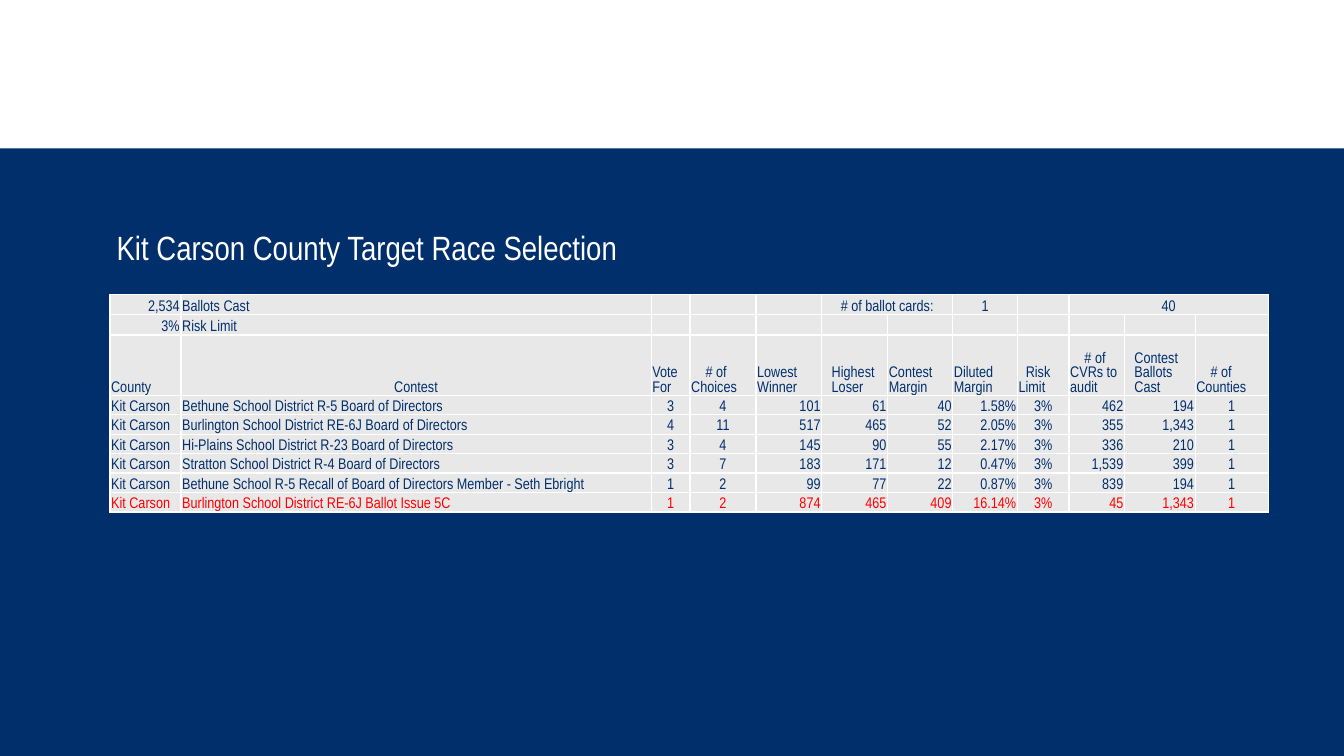
from lxml import etree
from pptx import Presentation
from pptx import util as u
from pptx.dml import color
from pptx.enum import shapes, text
from pptx.oxml import ns

NAVY, WHITE, GREY, RED = "002F6C", "FFFFFF", "E9E8E9", "FF0000"
ALIGN = {"l": text.PP_ALIGN.LEFT, "c": text.PP_ALIGN.CENTER, "r": text.PP_ALIGN.RIGHT}

COLUMN_WIDTHS = [1.79, 11.85, 0.98, 1.66, 1.66, 1.66, 1.64, 1.63, 1.3, 1.4, 1.78, 1.84]
ROW_HEIGHT, HEADER_HEIGHT = 0.49, 1.52
COLUMN_ALIGN = "llccrrrrcrrc"
HEADERS = ["County", "Contest", "Vote For", "# of Choices", "Lowest Winner",
           "Highest Loser", "Contest Margin", "Diluted Margin", "Risk Limit",
           "# of CVRs to audit", "Contest Ballots Cast", "# of Counties"]
HEADER_INDENTS = {3: 0.36, 8: 0.18, 9: 0.36, 11: 0.36}
HEADER_MARGINS = {5: 0.25, 10: 0.25}
# Row, column, text, alignment, columns spanned
SUMMARY = [(0, 0, "2,534", "r", 1), (0, 1, "Ballots Cast", "l", 1),
           (0, 5, "# of ballot cards:", "c", 2), (0, 7, "1", "c", 1),
           (0, 9, "40", "c", 3),
           (1, 0, "3%", "r", 1), (1, 1, "Risk Limit", "l", 1)]
CONTESTS = [
    ("Bethune School District R-5 Board of Directors",
     "3", "4", "101", "61", "40", "1.58%", "3%", "462", "194", "1"),
    ("Burlington School District RE-6J Board of Directors",
     "4", "11", "517", "465", "52", "2.05%", "3%", "355", "1,343", "1"),
    ("Hi-Plains School District R-23 Board of Directors",
     "3", "4", "145", "90", "55", "2.17%", "3%", "336", "210", "1"),
    ("Stratton School District R-4 Board of Directors",
     "3", "7", "183", "171", "12", "0.47%", "3%", "1,539", "399", "1"),
    ("Bethune School R-5 Recall of Board of Directors Member - Seth Ebright",
     "1", "2", "99", "77", "22", "0.87%", "3%", "839", "194", "1"),
    ("Burlington School District RE-6J Ballot Issue 5C",
     "1", "2", "874", "465", "409", "16.14%", "3%", "45", "1,343", "1"),
]


def rgb(value):
    return color.RGBColor.from_string(value)


def write(frame, words, size=11, ink=NAVY, align="l", indent=0, font="Arial Narrow"):
    """Fill the first paragraph of a text frame with one formatted run."""
    para = frame.paragraphs[0]
    para.alignment = ALIGN[align]
    if indent:
        para._p.get_or_add_pPr().set("indent", str(u.Cm(indent)))
    span = para.add_run()
    span.text = words
    span.font.size = u.Pt(size)
    span.font.name = font
    span.font.color.rgb = rgb(ink)


class SlideBuilder:
    def __init__(self, deck, background):
        self.slide = deck.slides.add_slide(deck.slide_layouts[6])
        fill = self.slide.background.fill
        fill.solid()
        fill.fore_color.rgb = rgb(background)

    def band(self, left, top, width, height, fill):
        box = self.slide.shapes.add_shape(
            shapes.MSO_SHAPE.RECTANGLE, *map(u.Cm, (left, top, width, height)))
        box.shadow.inherit = False
        box.fill.solid()
        box.fill.fore_color.rgb = rgb(fill)
        box.line.fill.background()

    def title(self, left, top, width, height, words):
        box = self.slide.shapes.add_textbox(*map(u.Cm, (left, top, width, height)))
        box.text_frame.word_wrap = True
        write(box.text_frame, words, size=24, ink=WHITE)

    def table(self, left, top, widths, heights):
        frame = self.slide.shapes.add_table(
            len(heights), len(widths),
            *map(u.Cm, (left, top, sum(widths), sum(heights))))
        grid = frame.table
        for column, width in zip(grid.columns, widths):
            column.width = u.Cm(width)
        for row, height in zip(grid.rows, heights):
            row.height = u.Cm(height)
        for cell in grid.iter_cells():
            self.style_cell(cell)
        return grid

    def style_cell(self, cell):
        cell.margin_left = cell.margin_right = cell.margin_top = u.Cm(0.03)
        cell.margin_bottom = 0
        cell.vertical_anchor = text.MSO_ANCHOR.BOTTOM
        cell.fill.solid()
        cell.fill.fore_color.rgb = rgb(GREY)
        properties = cell._tc.get_or_add_tcPr()
        for place, side in enumerate(("lnL", "lnR", "lnT", "lnB")):
            border = etree.Element(ns.qn("a:" + side), w=str(u.Pt(1)))
            fill = etree.SubElement(border, ns.qn("a:solidFill"))
            etree.SubElement(fill, ns.qn("a:srgbClr"), val=WHITE)
            properties.insert(place, border)
        # Keeps an empty cell from stretching its row
        para = cell.text_frame.paragraphs[0]
        etree.SubElement(para._p, ns.qn("a:endParaRPr"), sz="1100")


def main():
    deck = Presentation()
    deck.slide_width, deck.slide_height = u.Cm(33.87), u.Cm(19.05)
    page = SlideBuilder(deck, NAVY)
    page.band(0, 0, 33.87, 3.74, WHITE)

    heights = [ROW_HEIGHT] * 2 + [HEADER_HEIGHT] + [ROW_HEIGHT] * len(CONTESTS)
    grid = page.table(2.77, 7.42, COLUMN_WIDTHS, heights)
    for row, column, words, align, columns in SUMMARY:
        cell = grid.cell(row, column)
        if columns > 1:
            cell.merge(grid.cell(row, column + columns - 1))
        write(cell.text_frame, words, align=align)
    for column, words in enumerate(HEADERS):
        cell = grid.cell(2, column)
        cell.margin_left = u.Cm(HEADER_MARGINS.get(column, 0.03))
        write(cell.text_frame, words, align="c" if words == "Contest" else "l",
              indent=HEADER_INDENTS.get(column, 0))
    for row, contest in enumerate(CONTESTS, start=3):
        ink = RED if contest is CONTESTS[-1] else NAVY
        for column, words in enumerate(("Kit Carson", *contest)):
            write(grid.cell(row, column).text_frame, words, ink=ink,
                  align=COLUMN_ALIGN[column])

    page.title(2.69, 5.59, 15.93, 1.27, "Kit Carson County Target Race Selection")
    deck.save("out.pptx")


if __name__ == "__main__":
    main()
